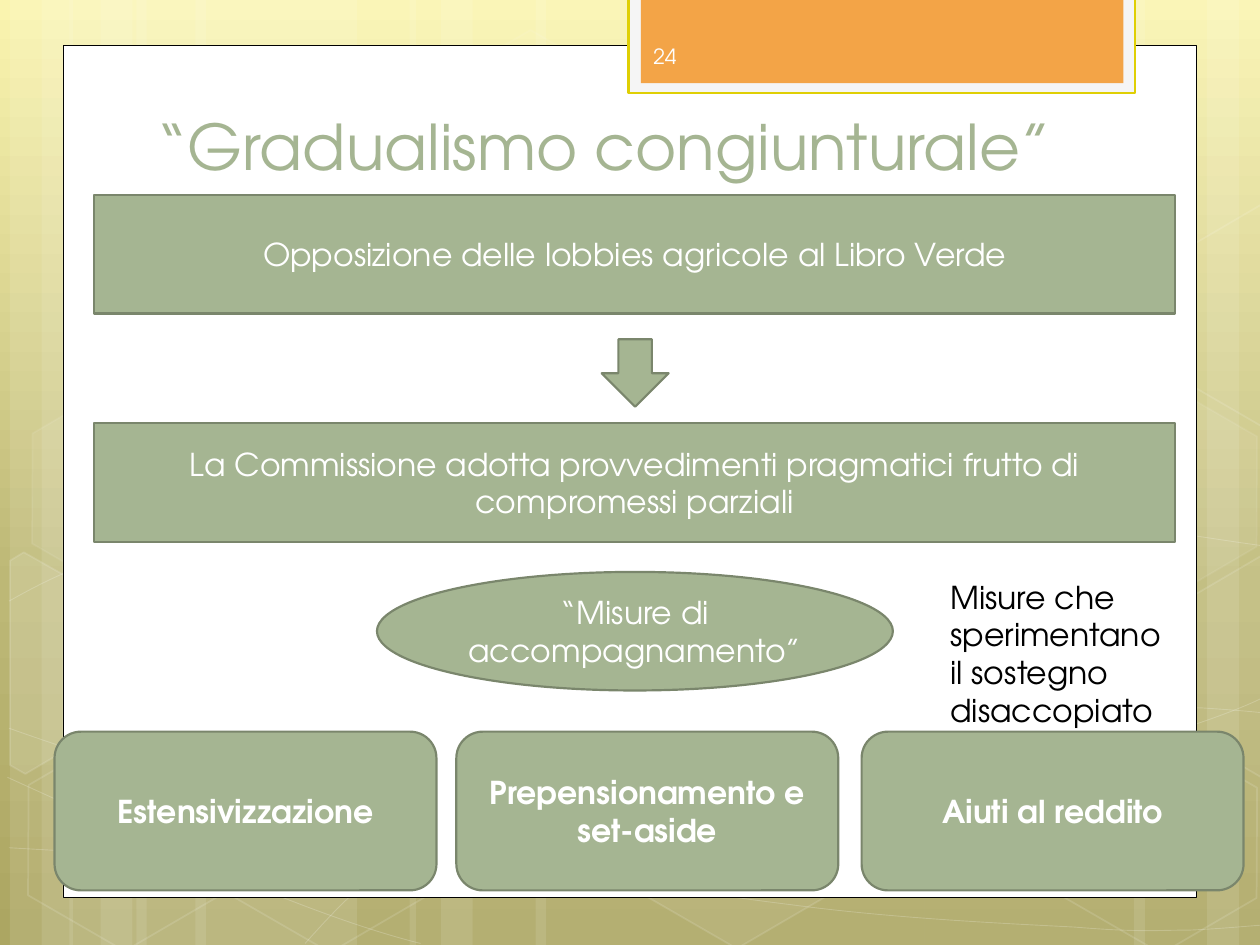
from copy import deepcopy
from math import cos, radians, sin
from lxml.etree import SubElement
from pptx import Presentation
from pptx.dml.color import RGBColor
from pptx.enum.shapes import MSO_SHAPE as Kind
from pptx.enum.text import MSO_ANCHOR, MSO_AUTO_SIZE, PP_ALIGN
from pptx.oxml.ns import qn
from pptx.util import Cm, Pt

WHITE = RGBColor(0xFF, 0xFF, 0xFF)
BLACK = RGBColor(0, 0, 0)
SAGE = RGBColor(0xA5, 0xB5, 0x92)
MOSS = RGBColor(0x7A, 0x86, 0x6C)
ORANGE = RGBColor(0xF3, 0xA4, 0x47)
YELLOW = RGBColor(0xDF, 0xCF, 0x04)
PALE = RGBColor(0xF5, 0xF5, 0xF5)
SNOW = RGBColor(0xFE, 0xFE, 0xFE)
SKY = [(0, RGBColor(0xFA, 0xF4, 0xAF)), (0.62, RGBColor(0xBD, 0xB8, 0x76)),
       (1, RGBColor(0xAC, 0xA6, 0x62))]
FONT = "TeX Gyre Adventor"
TILT = 30


def paint(shape, fill=None, line=None, width=1.25, fade=100, haze=100):
    """Set fill and line; fade and haze are their opacities in percent."""
    shape.shadow.inherit = False
    if fill is None:
        shape.fill.background()
    else:
        shape.fill.solid()
        shape.fill.fore_color.rgb = fill
    if line is None:
        shape.line.fill.background()
    else:
        shape.line.color.rgb = line
        shape.line.width = Pt(width)
    for part, amount in (("a:solidFill", fade), ("a:ln/a:solidFill", haze)):
        if amount < 100:
            for color in shape._element.spPr.xpath(part + "/a:srgbClr"):
                SubElement(color, qn("a:alpha"), val=str(amount * 1000))
    return shape


def write(shape, text, color=WHITE, align=PP_ALIGN.CENTER,
          anchor=MSO_ANCHOR.MIDDLE, size=18, bold=False):
    frame = shape.text_frame
    frame.word_wrap = True
    frame.vertical_anchor = anchor
    para = frame.paragraphs[0]
    para.alignment = align
    run = para.add_run()
    run.text = text
    style = {"name": FONT, "size": Pt(size), "bold": bold}
    for key, value in style.items():
        setattr(run.font, key, value)
    run.font.color.rgb = color


deck = Presentation()
deck.slide_width, deck.slide_height = Cm(25.4), Cm(19.05)
slide = deck.slides.add_slide(deck.slide_layouts[6])
shapes = slide.shapes

# Background gradient, top to bottom
back = slide.background.fill
back.gradient()
back.gradient_angle = 270
first = back.gradient_stops[0]._gs
first.addnext(deepcopy(first))
for stop, (place, color) in zip(back.gradient_stops, SKY):
    stop.position = place
    stop.color.rgb = color

# Light vertical bands
bands = [(2.75, 4.45), (0.2, 1.27), (0.84, 2.12), (3.94, 4.45), (1.4, 1.27),
         (2.03, 2.12), (18.63, 4.45), (24.33, 1.27), (22.86, 2.12),
         (10.8, 7.83), (8.26, 1.27), (8.89, 2.12)]
for left, width in bands:
    band = shapes.add_shape(Kind.RECTANGLE, Cm(left), 0, Cm(width), Cm(19.05))
    paint(band, WHITE, fade=10)

# Thin curves: a start point, then two controls and an end for each piece
curves = [
    [(0.18, 17.09), (1.55, 17.17), (2.92, 17.25), (4.83, 17.22),
     (6.73, 17.2), (9.09, 17.15), (11.63, 16.89),
     (14.17, 16.64), (17.78, 16.15), (20.12, 15.67),
     (22.43, 15.19), (24.82, 14.43), (25.58, 14)],
    [(0.18, 12.12), (0.91, 11.71), (1.65, 11.33), (3.07, 10.95),
     (4.52, 10.57), (6.58, 10.01), (8.81, 9.83),
     (11.07, 9.65), (13.82, 9.63), (16.61, 9.83),
     (19.41, 10.03), (24.05, 10.82), (25.58, 11.02)],
    [(0.15, 15.67), (3.23, 17.07), (6.27, 18.47), (8.48, 19.02)],
    [(0.18, 14.68), (0.97, 14.96), (1.78, 15.24), (3.25, 15.65),
     (4.72, 16.03), (6.93, 16.66), (9.07, 17.09),
     (11.18, 17.53), (13.84, 17.98), (15.95, 18.24),
     (18.06, 18.52), (20.32, 18.62), (21.67, 18.69),
     (22.99, 18.8), (23.34, 18.75), (24, 18.75),
     (24.66, 18.72), (25.12, 18.67), (25.58, 18.64)],
    [(6.15, 19.02), (6.6, 18.52), (7.06, 18.01), (7.67, 17.55),
     (8.28, 17.09), (9.14, 16.59), (9.86, 16.23),
     (10.57, 15.88), (11, 15.72), (11.94, 15.47),
     (12.85, 15.21), (14.55, 14.86), (15.44, 14.68),
     (16.36, 14.5), (16.48, 14.5), (17.27, 14.45),
     (18.06, 14.38), (19.3, 14.3), (20.17, 14.27),
     (21.06, 14.25), (22.5, 14.27), (22.5, 14.27),
     (23.07, 14.27), (23.64, 14.27), (24.21, 14.27),
     (24.66, 14.3), (25.1, 14.33), (25.55, 14.38)],
]
for curve in curves:
    dots = [(Cm(x), Cm(y)) for x, y in curve]
    pen = shapes.build_freeform(*dots[0])
    pen.add_line_segments(dots[1:], close=False)
    arc = paint(pen.convert_to_shape(), None, WHITE, 0.5, haze=20)
    # Turn each three straight pieces into one Bezier piece
    lines = arc._element.xpath(".//a:lnTo")
    for i in range(0, len(lines), 3):
        bend = SubElement(lines[i].getparent(), qn("a:cubicBezTo"))
        for line in lines[i:i + 3]:
            bend.append(line[0])
            line.getparent().remove(line)

# Hexagons: left, top, fill opacity, line opacity
cells = [(8.48, 0.91, 4, 8), (12.62, 14.96, 6, 12), (0.28, 15.01, 0, 12),
         (0.36, 7.92, 7, 8), (4.42, 15.04, 0, 12), (19.13, 11.51, 10, 12),
         (21.18, 15.06, 0, 12), (21.18, 7.98, 7, 8)]
for left, top, fade, haze in cells:
    cell = shapes.add_shape(Kind.HEXAGON, Cm(left), Cm(top), Cm(4.45), Cm(3.86))
    cell.adjustments[0] = 0.285
    cell.rotation = TILT
    paint(cell, WHITE if fade else None, WHITE, 1, fade, haze)

# Hexagons cut by the slide edge, drawn upright and then tilted
west = [(0.2, 11.3), (0.48, 11.13), (2.44, 12.24), (2.41, 14.48),
        (0.51, 15.6), (0.2, 15.42)]
east = [(23.52, 12.32), (25.43, 11.2), (25.63, 11.33), (25.63, 15.57),
        (25.45, 15.67), (23.52, 14.55)]
north = [(x, y - 7.08) for x, y in east]
c, s = cos(radians(TILT)), sin(radians(TILT))
for points, mid, high, fade in ((west, 0.91, 13.59, 10), (east, 25.02, 13.21, 4),
                                (north, 25.02, 6.13, 0)):
    dots = [(Cm(mid + (x - mid) * c + (y - high) * s),
             Cm(high - (x - mid) * s + (y - high) * c)) for x, y in points]
    pen = shapes.build_freeform(*dots[0])
    pen.add_line_segments(dots[1:], close=True)
    cell = paint(pen.convert_to_shape(), WHITE if fade else None, WHITE, 1, fade, 12)
    cell.rotation = TILT

# White page and orange tab
panels = [(1.27, 0.91, 22.86, 17.19, WHITE, BLACK, 0.5),
          (12.67, -0.05, 10.21, 1.93, PALE, YELLOW, 1.25),
          (12.92, -0.05, 9.73, 1.73, ORANGE, None, 0)]
for *box, fill, line, width in panels:
    panel = shapes.add_shape(Kind.RECTANGLE, *[Cm(n) for n in box])
    paint(panel, fill, line, width)

# Green diagram
nodes = [
    (Kind.RECTANGLE, 1.9, 3.93, 21.79, 2.39,
     "Opposizione delle lobbies agricole al Libro Verde"),
    (Kind.DOWN_ARROW, 12.13, 6.84, 1.35, 1.36, ""),
    (Kind.RECTANGLE, 1.9, 8.53, 21.79, 2.39,
     "La Commissione adotta provvedimenti pragmatici frutto di compromessi parziali"),
    (Kind.OVAL, 7.6, 11.53, 10.4, 2.39, "“Misure di accompagnamento”"),
]
for left, text in ((1.1, "Estensivizzazione"), (17.37, "Aiuti al reddito"),
                   (9.2, "Prepensionamento e set-aside")):
    nodes.append((Kind.ROUNDED_RECTANGLE, left, 14.75, 7.7, 3.2, text))
for kind, *box, text in nodes:
    node = paint(shapes.add_shape(kind, *[Cm(n) for n in box]), SAGE, MOSS)
    if text:
        write(node, text, bold=kind == Kind.ROUNDED_RECTANGLE)

# Title, side note and slide number
labels = [
    (2.9, 2.12, 19.5, 1.7, "“Gradualismo congiunturale”", SAGE, MSO_ANCHOR.BOTTOM, 36),
    (18.91, 11.52, 4.8, 3.33, "Misure che sperimentano il sostegno disaccopiato",
     BLACK, MSO_ANCHOR.TOP, 18),
    (12.92, 0.62, 3.7, 1.02, "24", SNOW, MSO_ANCHOR.MIDDLE, 12),
]
for *box, text, color, anchor, size in labels:
    label = shapes.add_textbox(*[Cm(n) for n in box])
    write(label, text, color, PP_ALIGN.LEFT, anchor, size)
    if anchor == MSO_ANCHOR.TOP:
        label.text_frame.auto_size = MSO_AUTO_SIZE.SHAPE_TO_FIT_TEXT

deck.save("out.pptx")
